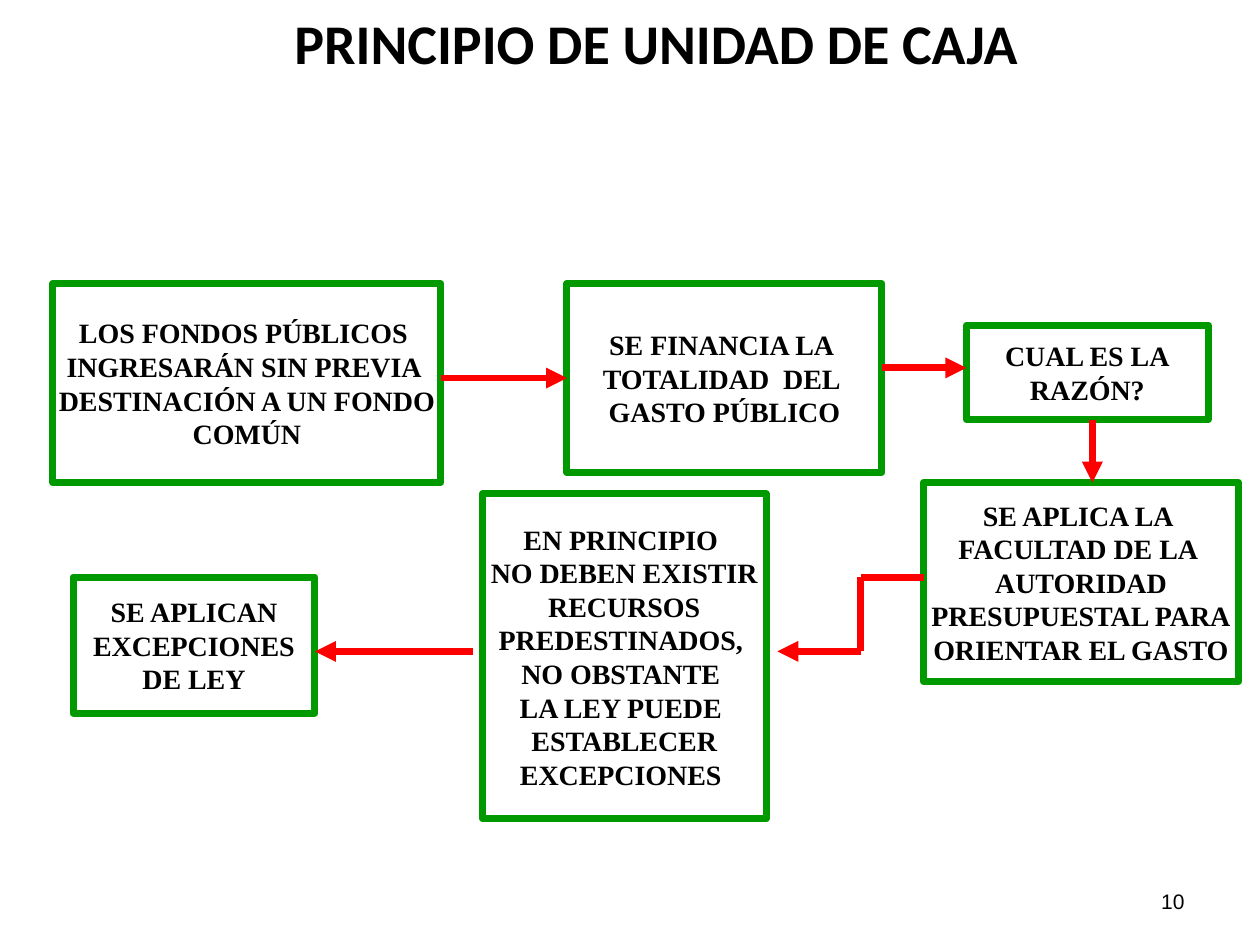
import pptx
import pptx.util
import pptx.dml.color
import pptx.enum.shapes
import pptx.enum.text
import pptx.oxml.ns
from lxml import etree

Inches = pptx.util.Inches
ALIGN = pptx.enum.text.PP_ALIGN
COLORS = {"text": "000000", "box": "FFFFFF", "border": "009900", "arrow": "FF0000"}
RGB = {name: pptx.dml.color.RGBColor.from_string(value) for name, value in COLORS.items()}


def write_text(shape, lines, alignment, wrap, font_format):
    frame = shape.text_frame
    frame.word_wrap = wrap
    frame.vertical_anchor = pptx.enum.text.MSO_ANCHOR.MIDDLE
    frame.text = "\n".join(lines)
    for paragraph in frame.paragraphs:
        paragraph.alignment = alignment
        font = paragraph.runs[0].font
        font.color.rgb = RGB["text"]
        for name, value in font_format.items():
            setattr(font, name, value)


presentation = pptx.Presentation()
presentation.slide_width = Inches(10)
presentation.slide_height = Inches(7.5)
slide = presentation.slides.add_slide(presentation.slide_layouts[6])

title_format = {"name": "Calibri", "size": pptx.util.Pt(32), "bold": True}
number_format = {"name": "Arial", "size": pptx.util.Pt(12), "bold": False}
box_format = {"name": "Times New Roman", "size": pptx.util.Pt(16), "bold": True}

labels = [
    ("PRINCIPIO DE UNIDAD DE CAJA", (0.92, 0, 8.58, 0.67), ALIGN.CENTER, title_format),
    ("10", (7.17, 6.95, 2.33, 0.4), ALIGN.RIGHT, number_format),
]
for text, position, alignment, font_format in labels:
    shape = slide.shapes.add_textbox(*map(Inches, position))
    write_text(shape, [text], alignment, True, font_format)

boxes = {
    "funds": ((0.42, 2.25, 3.08, 1.58), [
        "LOS FONDOS PÚBLICOS ", "INGRESARÁN SIN PREVIA ",
        "DESTINACIÓN A UN FONDO", "COMÚN"]),
    "spending": ((4.5, 2.25, 2.5, 1.5), [
        "SE FINANCIA LA ", "TOTALIDAD  DEL ", "GASTO PÚBLICO"]),
    "reason": ((7.67, 2.58, 1.92, 0.75), ["CUAL ES LA", "RAZÓN?"]),
    "authority": ((7.33, 3.83, 2.5, 1.58), [
        "SE APLICA LA ", "FACULTAD DE LA ", "AUTORIDAD",
        "PRESUPUESTAL PARA", "ORIENTAR EL GASTO"]),
    "principle": ((3.83, 3.92, 2.25, 2.58), [
        "EN PRINCIPIO ", "NO DEBEN EXISTIR", "RECURSOS", "PREDESTINADOS, ",
        "NO OBSTANTE ", "LA LEY PUEDE ", "ESTABLECER", "EXCEPCIONES "]),
    "exceptions": ((0.58, 4.58, 1.92, 1.08), ["SE APLICAN", "EXCEPCIONES", "DE LEY"]),
}
box_shapes = {}
for name, (position, lines) in boxes.items():
    shape = slide.shapes.add_shape(
        pptx.enum.shapes.MSO_SHAPE.RECTANGLE, *map(Inches, position))
    shape.shadow.inherit = False
    shape.fill.solid()
    shape.fill.fore_color.rgb = RGB["box"]
    shape.line.color.rgb = RGB["border"]
    shape.line.width = pptx.util.Pt(4)
    write_text(shape, lines, ALIGN.CENTER, False, box_format)
    box_shapes[name] = shape

arrows = [
    ((3.5, 3, 4.5, 3), True, "spending"),
    ((7, 2.92, 7.67, 2.92), True, None),
    ((8.67, 3.33, 8.67, 3.83), True, None),
    ((7.33, 4.58, 6.83, 4.58), False, None),
    ((6.83, 4.58, 6.83, 5.17), False, None),
    ((6.83, 5.17, 6.17, 5.17), True, None),
    ((3.75, 5.17, 2.5, 5.17), True, None),
]
for points, has_head, target in arrows:
    connector = slide.shapes.add_connector(
        pptx.enum.shapes.MSO_CONNECTOR.STRAIGHT, *map(Inches, points))
    connector.line.color.rgb = RGB["arrow"]
    connector.line.width = pptx.util.Pt(4)
    if has_head:
        line = connector.line._get_or_add_ln()
        etree.SubElement(line, pptx.oxml.ns.qn("a:tailEnd"), type="triangle")
    etree.SubElement(connector._element.spPr, pptx.oxml.ns.qn("a:effectLst"))
    if target:
        connector.end_connect(box_shapes[target], 1)

presentation.save("out.pptx")
